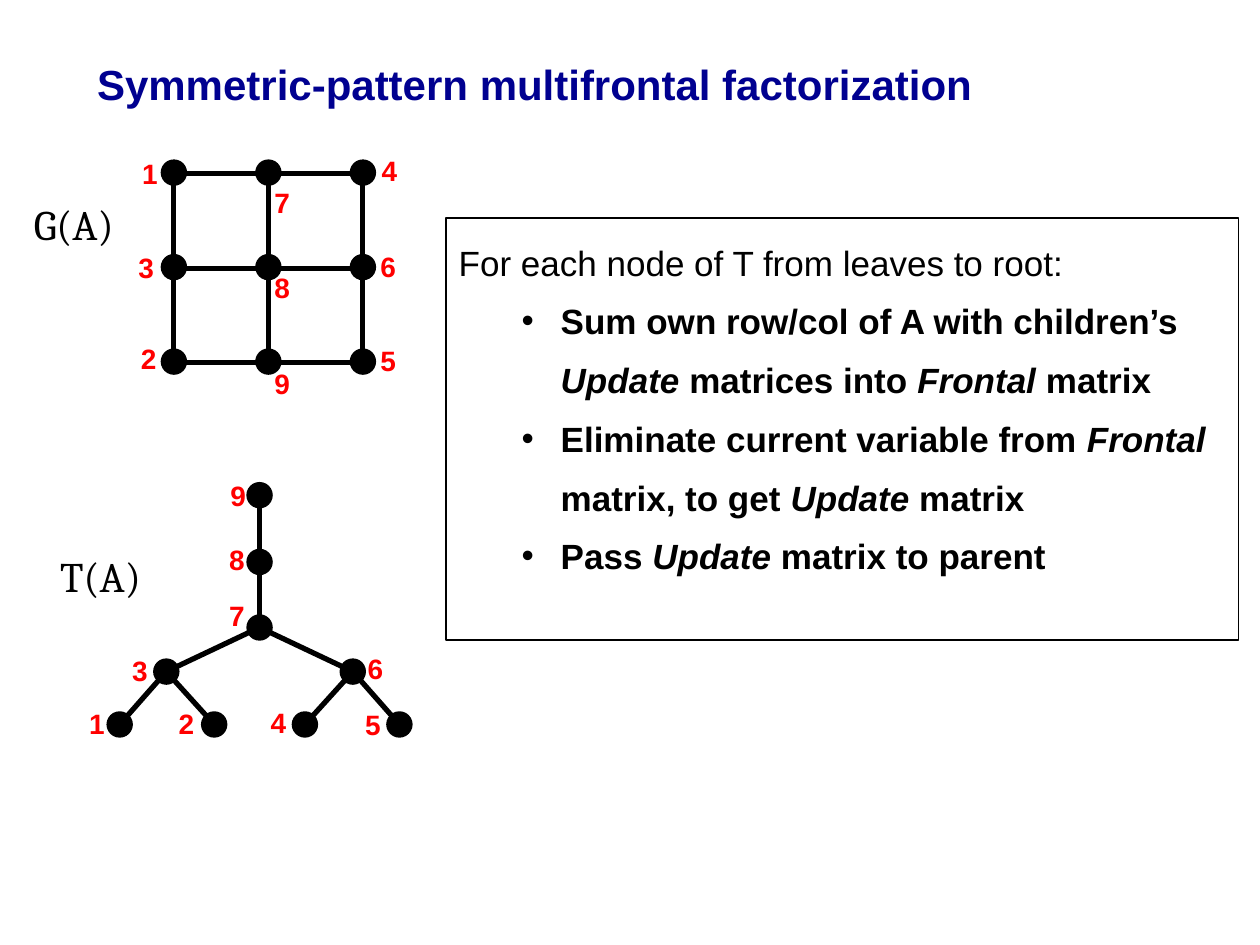
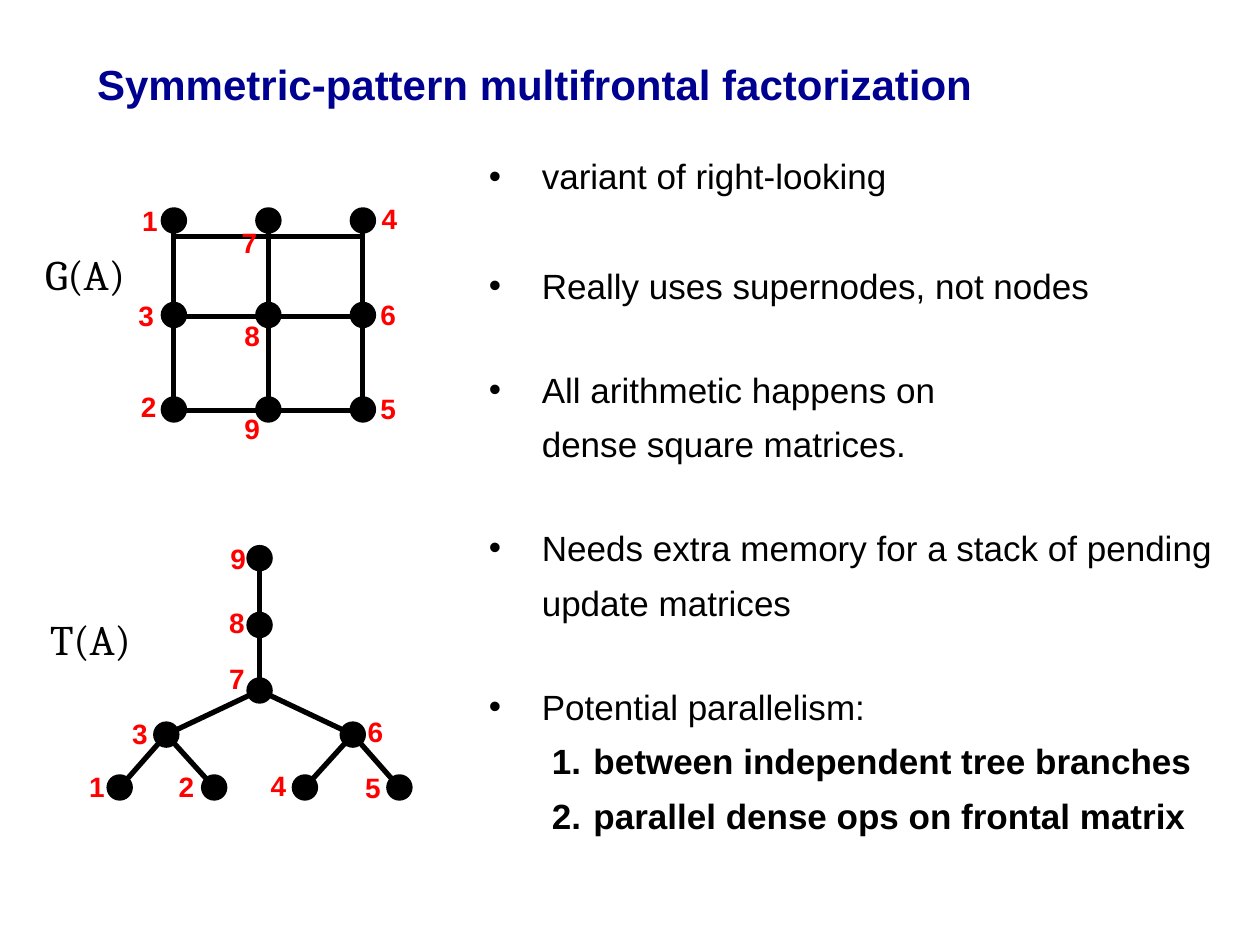
from dataclasses import dataclass
from typing import NamedTuple, Optional

from lxml import etree
from pptx import Presentation
from pptx.dml.color import RGBColor
from pptx.enum.shapes import MSO_CONNECTOR, MSO_SHAPE
from pptx.enum.text import MSO_ANCHOR, MSO_AUTO_SIZE, PP_ALIGN
from pptx.oxml.ns import qn
from pptx.util import Inches, Pt

NAVY = RGBColor(0x00, 0x00, 0x90)
BLACK = RGBColor(0x00, 0x00, 0x00)
RED = RGBColor(0xFF, 0x00, 0x00)

TITLE = "Symmetric-pattern multifrontal factorization"
DOT_SIZE = 0.21
GRID_LEFT, GRID_TOP, GRID_STEP = 1.38, 1.37, 0.75
GRID_NUMBERS = ((1, 7, 4), (3, 8, 6), (2, 9, 5))


class Point(NamedTuple):
    x: float
    y: float


class Edge(NamedTuple):
    start: Point
    end: Point


class Box(NamedTuple):
    left: float
    top: float
    width: float
    height: float


class Item(NamedTuple):
    """One body paragraph; words between asterisks are italic."""
    text: str
    margin: float
    hanging: float
    bullet: Optional[str] = None
    level: int = 0
    space_before: float = 0


@dataclass
class Graph:
    caption: str
    caption_at: Point
    nodes: dict[int, Point]
    number_at: dict[int, Point]
    edges: list[Edge]
    drop: float = 0


TREE_NODES = {
    9: Point(2.06, 3.93), 8: Point(2.06, 4.46), 7: Point(2.06, 4.98),
    3: Point(1.32, 5.33), 6: Point(2.8, 5.33),
    1: Point(0.95, 5.75), 2: Point(1.7, 5.75),
    4: Point(2.42, 5.75), 5: Point(3.17, 5.75),
}
TREE_NUMBERS_AT = {
    9: Point(1.73, 3.75), 8: Point(1.72, 4.26), 7: Point(1.72, 4.7),
    3: Point(0.95, 5.14), 6: Point(2.82, 5.12),
    1: Point(0.61, 5.56), 2: Point(1.32, 5.56),
    4: Point(2.05, 5.55), 5: Point(2.8, 5.57),
}
TREE_LINKS = ((9, 7), (7, 3), (7, 6), (3, 1), (3, 2), (6, 4), (6, 5))

GRID_NODES = {
    number: Point(GRID_LEFT + column * GRID_STEP, GRID_TOP + row * GRID_STEP)
    for row, numbers in enumerate(GRID_NUMBERS)
    for column, number in enumerate(numbers)
}
GRID_SIDE_NUMBERS_AT = {
    1: Point(1.03, 1.19), 3: Point(1, 1.94), 2: Point(1.02, 2.66),
    4: Point(2.93, 1.17), 6: Point(2.92, 1.93), 5: Point(2.92, 2.68),
}


def grid_graph(caption_at: Point, middle_numbers: dict[int, Point],
               drop: float = 0, top_line_drop: float = 0) -> Graph:
    edges = []
    for row, numbers in enumerate(GRID_NUMBERS):
        shift = 0.01 + (top_line_drop if row == 0 else 0)
        first, last = GRID_NODES[numbers[0]], GRID_NODES[numbers[-1]]
        edges.append(Edge(Point(first.x - 0.01, first.y + shift),
                          Point(last.x + 0.02, last.y + shift)))
    for top, bottom in zip(GRID_NUMBERS[0], GRID_NUMBERS[-1]):
        edges.append(Edge(GRID_NODES[top], GRID_NODES[bottom]))
    return Graph("G(A)", caption_at, GRID_NODES,
                 GRID_SIDE_NUMBERS_AT | middle_numbers, edges, drop)


def tree_graph(caption_at: Point, drop: float = 0) -> Graph:
    edges = [Edge(TREE_NODES[parent], TREE_NODES[child])
             for parent, child in TREE_LINKS]
    return Graph("T(A)", caption_at, TREE_NODES, TREE_NUMBERS_AT, edges, drop)


def write(paragraph, text: str, *, size: float, color: RGBColor = BLACK,
          font: str = "Arial", bold: bool = False) -> None:
    """Add text to the paragraph; *...* is italic and a newline breaks the line."""
    for line_index, line in enumerate(text.split("\n")):
        if line_index:
            paragraph.add_line_break()
        for part_index, part in enumerate(line.split("*")):
            if not part:
                continue
            run = paragraph.add_run()
            run.text = part
            run.font.name = font
            run.font.size = Pt(size)
            run.font.bold = bold
            run.font.italic = part_index % 2 == 1
            run.font.color.rgb = color


def place(shape, box: Box) -> None:
    shape.left, shape.top, shape.width, shape.height = map(Inches, box)


def add_label(shapes, box: Box, text: str, **text_format) -> None:
    label = shapes.add_textbox(*map(Inches, box))
    label.text_frame.word_wrap = False
    label.text_frame.auto_size = MSO_AUTO_SIZE.SHAPE_TO_FIT_TEXT
    write(label.text_frame.paragraphs[0], text, **text_format)


def add_edge(shapes, edge: Edge, drop: float) -> None:
    line = shapes.add_connector(
        MSO_CONNECTOR.STRAIGHT,
        Inches(edge.start.x), Inches(edge.start.y + drop),
        Inches(edge.end.x), Inches(edge.end.y + drop))
    line.line.color.rgb = BLACK
    line.line.width = Pt(3)
    etree.SubElement(line._element.spPr, qn("a:effectLst"))


def add_dot(shapes, center: Point, drop: float) -> None:
    dot = shapes.add_shape(
        MSO_SHAPE.OVAL,
        Inches(center.x - DOT_SIZE / 2), Inches(center.y + drop - DOT_SIZE / 2),
        Inches(DOT_SIZE), Inches(DOT_SIZE))
    dot.shadow.inherit = False
    dot.fill.solid()
    dot.fill.fore_color.rgb = BLACK
    dot.line.fill.background()


def draw_graph(slide, graph: Graph) -> None:
    shapes = slide.shapes.add_group_shape().shapes
    for edge in graph.edges:
        add_edge(shapes, edge, graph.drop)
    for center in graph.nodes.values():
        add_dot(shapes, center, graph.drop)
    for number, at in graph.number_at.items():
        add_label(shapes, Box(at.x, at.y + graph.drop, 0.32, 0.37),
                  str(number), size=16, color=RED, bold=True)
    add_label(shapes, Box(*graph.caption_at, 0.9, 0.51), graph.caption,
              size=24, font="Cambria")


def set_bullet(paragraph, item: Item) -> None:
    properties = paragraph._p.get_or_add_pPr()
    properties.set("marL", str(Inches(item.margin)))
    properties.set("indent", str(-Inches(item.hanging)))
    if item.bullet is None:
        etree.SubElement(properties, qn("a:buNone"))
    elif item.bullet == "1.":
        etree.SubElement(properties, qn("a:buFont"), typeface="+mj-lt")
        etree.SubElement(properties, qn("a:buAutoNum"), type="arabicPeriod")
    else:
        etree.SubElement(properties, qn("a:buFont"), typeface="Arial")
        etree.SubElement(properties, qn("a:buChar"), char=item.bullet)


def fill_body(body, box: Box, items: list[Item], line_spacing: float) -> None:
    place(body, box)
    frame = body.text_frame
    frame.auto_size = MSO_AUTO_SIZE.NONE
    frame.vertical_anchor = MSO_ANCHOR.TOP
    for index, item in enumerate(items):
        paragraph = frame.add_paragraph() if index else frame.paragraphs[0]
        paragraph.level = item.level
        set_bullet(paragraph, item)
        paragraph.line_spacing = line_spacing
        paragraph.space_before = Pt(item.space_before)
        write(paragraph, item.text, size=20, bold=item.level > 0)


def add_titled_slide(presentation):
    slide = presentation.slides.add_slide(presentation.slide_layouts[1])
    title = slide.shapes.title
    place(title, Box(0.67, 0.33, 8.75, 0.67))
    title.text_frame.auto_size = MSO_AUTO_SIZE.NONE
    title.text_frame.vertical_anchor = MSO_ANCHOR.MIDDLE
    heading = title.text_frame.paragraphs[0]
    heading.alignment = PP_ALIGN.LEFT
    write(heading, TITLE, size=24, color=NAVY, bold=True)
    return slide


def step(text: str) -> Item:
    return Item(text, 0.81, 0.31, "•", level=1)


def remark(text: str, space_before: float = 28.2) -> Item:
    return Item(text, 0.42, 0.42, "•", space_before=space_before)


def parallelism(text: str) -> Item:
    return Item(text, 0.83, 0.33, "1.", level=1)


def add_algorithm_slide(presentation) -> None:
    slide = add_titled_slide(presentation)
    draw_graph(slide, tree_graph(Point(0.38, 4.32)))
    algorithm = slide.placeholders[1]
    algorithm.line.color.rgb = BLACK
    algorithm.line.width = Pt(0.75)
    fill_body(algorithm, Box(3.54, 1.73, 6.29, 3.35), [
        Item("For each node of T from leaves to root:", 0.38, 0.38),
        step("Sum own row/col of A with children’s *Update* matrices "
             "into *Frontal* matrix"),
        step("Eliminate current variable from *Frontal* matrix, "
             "to get *Update* matrix"),
        step("Pass *Update* matrix to parent"),
    ], line_spacing=1.4)
    draw_graph(slide, grid_graph(
        Point(0.17, 1.53),
        {7: Point(2.08, 1.42), 8: Point(2.08, 2.1), 9: Point(2.08, 2.86)}))


def add_remarks_slide(presentation) -> None:
    slide = add_titled_slide(presentation)
    draw_graph(slide, tree_graph(Point(0.3, 4.82), drop=0.5))
    draw_graph(slide, grid_graph(
        Point(0.26, 1.92),
        {7: Point(1.82, 1.36), 8: Point(1.84, 2.1), 9: Point(1.84, 2.84)},
        drop=0.38, top_line_drop=0.12))
    fill_body(slide.placeholders[1], Box(3.78, 1.08, 6, 5.67), [
        remark("variant of right-looking", space_before=0),
        remark("Really uses supernodes, not nodes", space_before=31.2),
        remark("All arithmetic happens on\ndense square matrices."),
        remark("Needs extra memory for a stack of pending update matrices"),
        remark("Potential parallelism:"),
        parallelism("between independent tree branches"),
        parallelism("parallel dense ops on frontal matrix"),
    ], line_spacing=1.3)


def main() -> None:
    presentation = Presentation()
    presentation.slide_width = Inches(10)
    presentation.slide_height = Inches(7.5)
    add_algorithm_slide(presentation)
    add_remarks_slide(presentation)
    presentation.save("out.pptx")


if __name__ == "__main__":
    main()
